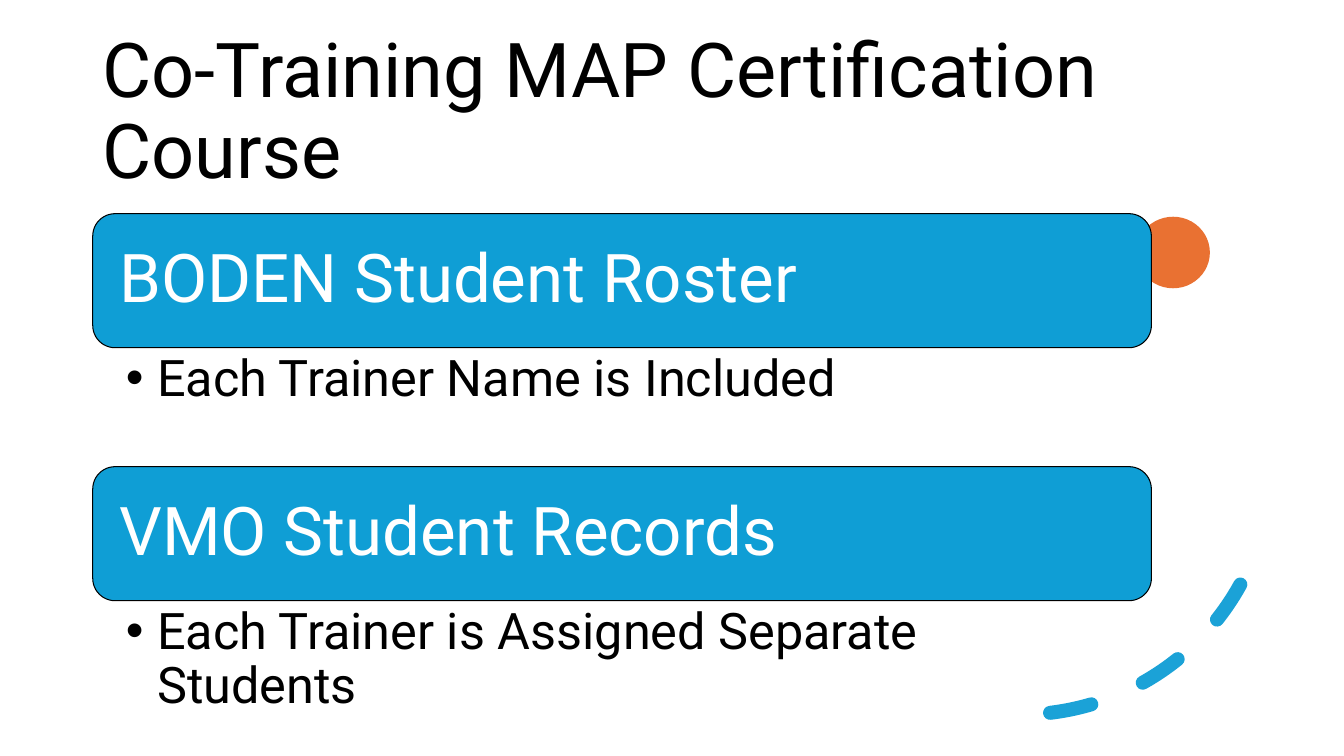
from lxml import etree
from pptx import Presentation
from pptx.dml.color import RGBColor
from pptx.enum import dml, shapes, text
from pptx.oxml.ns import qn
from pptx.util import Pt

PX = 9144  # 100 px to the inch
FONT = "Roboto"
COLORS = {"blue": "0F9ED5", "orange": "E97132", "black": "000000", "white": "FFFFFF"}
SECTIONS = [
    ("BODEN Student Roster", "Each Trainer Name is Included"),
    ("VMO Student Records", "Each Trainer is Assigned Separate Students"),
]


def rgb(name):
    return RGBColor.from_string(COLORS[name])


def emu(*lengths):
    return [n * PX for n in lengths]


def write(sp, content, size, color, anchor, insets):
    """Put one left-aligned paragraph into sp; insets run left, top, right, bottom."""
    tf = sp.text_frame
    tf.word_wrap = True
    tf.vertical_anchor = anchor
    tf.margin_left, tf.margin_top, tf.margin_right, tf.margin_bottom = emu(*insets)
    p = tf.paragraphs[0]
    p.alignment = text.PP_ALIGN.LEFT
    p.line_spacing = 0.9
    r = p.add_run()
    r.text = content
    r.font.name = FONT
    r.font.size = Pt(size)
    r.font.color.rgb = rgb(color)
    return p


def add_bullet(p, indent):
    pPr = p._p.get_or_add_pPr()
    pPr.set("marL", str(indent * PX))
    pPr.set("indent", str(-indent * PX))
    etree.SubElement(pPr, qn("a:buFont"), typeface="Arial")
    etree.SubElement(pPr, qn("a:buChar"), char="•")


def add_title(s, x, y, w, h):
    sp = s.shapes.add_textbox(*emu(x, y, w, h))
    write(sp, "Co-Training MAP Certification Course", 54, "black",
          text.MSO_ANCHOR.MIDDLE, (10, 5, 10, 5))


def add_dashed_arc(s, x, y, size):
    arc = s.shapes.add_shape(shapes.MSO_SHAPE.ARC, *emu(x, y, size, size))
    arc.shadow.inherit = False
    arc.adjustments[0], arc.adjustments[1] = 162, 200.931
    arc.rotation = 353.2
    arc._element.spPr.find(qn("a:xfrm")).set("flipV", "1")
    arc.fill.background()
    arc.line.color.rgb = rgb("blue")
    arc.line.width = Pt(10)
    arc.line.dash_style = dml.MSO_LINE.DASH
    ln = arc._element.spPr.find(qn("a:ln"))
    ln.set("cap", "rnd")
    etree.SubElement(ln.find(".//" + qn("a:srgbClr")), qn("a:alpha"), val="95000")


def add_dot(s, x, y, w, h):
    dot = s.shapes.add_shape(shapes.MSO_SHAPE.OVAL, *emu(x, y, w, h))
    dot.shadow.inherit = False
    dot.fill.solid()
    dot.fill.fore_color.rgb = rgb("orange")
    dot.line.fill.background()


def add_section(s, x, y, w, bar_h, body_h, heading, detail):
    """Blue heading bar with a bullet below it."""
    bar = s.shapes.add_shape(shapes.MSO_SHAPE.ROUNDED_RECTANGLE, *emu(x, y, w, bar_h))
    bar.shadow.inherit = False
    bar.fill.solid()
    bar.fill.fore_color.rgb = rgb("blue")
    bar.line.color.rgb = rgb("black")
    bar.line.width = Pt(0.75)
    write(bar, heading, 48, "white", text.MSO_ANCHOR.MIDDLE, (20, 20, 20, 20))

    body = s.shapes.add_textbox(*emu(x, y + bar_h, w, body_h))
    p = write(body, detail, 36, "black", text.MSO_ANCHOR.TOP, (33, 5, 28, 5))
    add_bullet(p, 31)


def add_sections(s, x, y, w, bar_h, body_h):
    for i, (heading, detail) in enumerate(SECTIONS):
        add_section(s, x, y + i * (bar_h + body_h), w, bar_h, body_h, heading, detail)


def main():
    prs = Presentation()
    prs.slide_width, prs.slide_height = emu(1333, 750)
    s = prs.slides.add_slide(prs.slide_layouts[6])
    add_title(s, 92, 40, 1150, 145)
    add_dashed_arc(s, 763, 211, 498)
    add_dot(s, 1127, 215, 73, 71)
    add_sections(s, 92, 212, 1050, 133, 118)
    prs.save("out.pptx")


if __name__ == "__main__":
    main()
